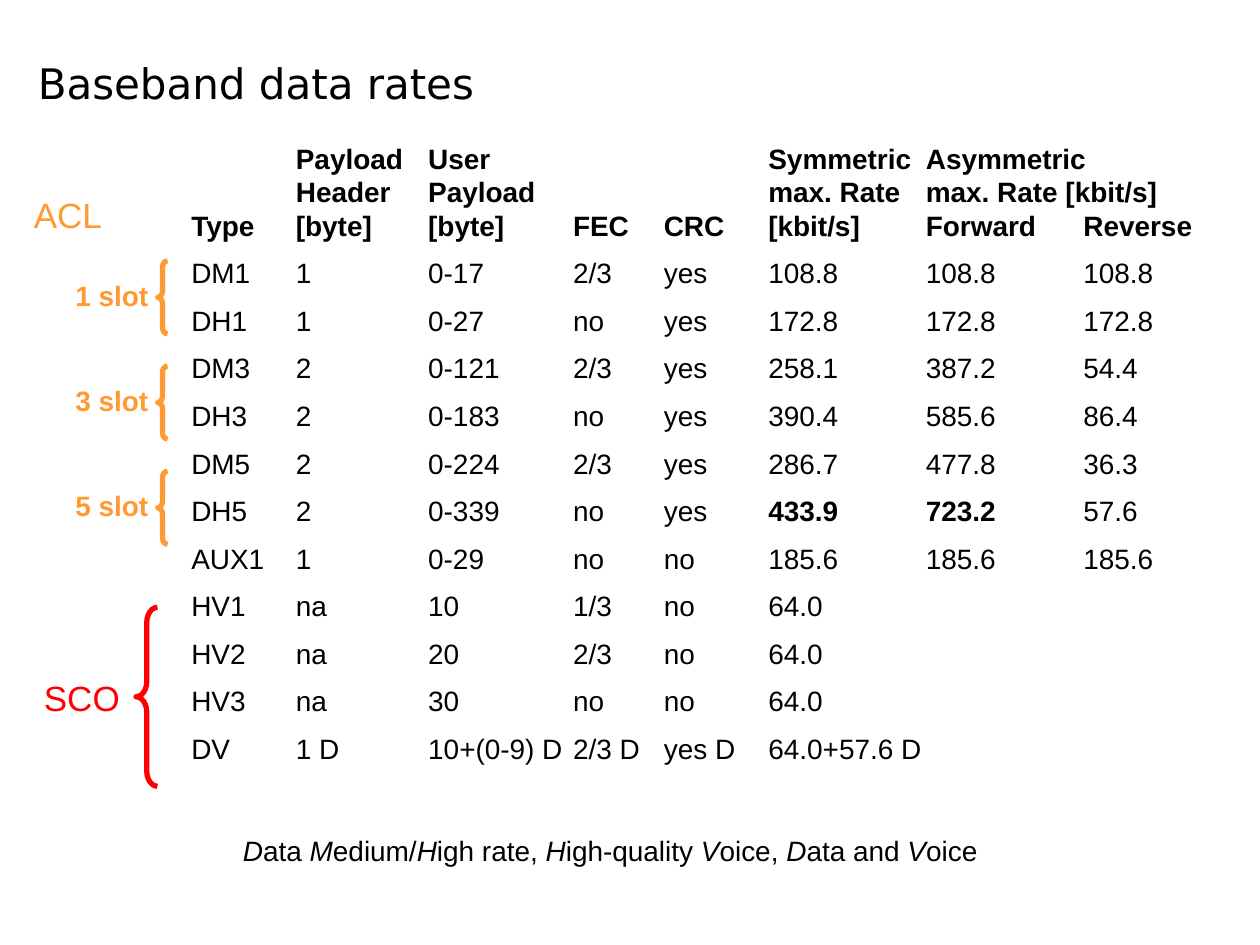
from lxml import etree
from pptx import Presentation
from pptx import util as u
from pptx.dml.color import RGBColor
from pptx.enum import shapes, text
from pptx.oxml.ns import qn

BLACK = RGBColor(0x00, 0x00, 0x00)
ORANGE = RGBColor(0xFF, 0x99, 0x33)
RED = RGBColor(0xFF, 0x00, 0x00)
BODY = {"name": "Arial", "size": u.Pt(16)}
GROUP = {"name": "Arial", "size": u.Pt(20)}

# Column starts, in inches from the left edge of the table text
TAB_STOPS = (0.83, 1.88, 3.03, 3.75, 4.58, 5.83, 7.08)

HEADER = (
    ("", "Payload", "User", "", "", "Symmetric", "Asymmetric"),
    ("", "Header", "Payload", "", "", "max. Rate", "max. Rate [kbit/s]"),
    ("Type", "[byte]", "[byte]", "FEC", "CRC", "[kbit/s]", "Forward", "Reverse"),
)
# Asterisks enclose emphasised text
RATES = (
    ("DM1", "1", "0-17", "2/3", "yes", "108.8", "108.8", "108.8"),
    ("DH1", "1", "0-27", "no", "yes", "172.8", "172.8", "172.8"),
    ("DM3", "2", "0-121", "2/3", "yes", "258.1", "387.2", "54.4"),
    ("DH3", "2", "0-183", "no", "yes", "390.4", "585.6", "86.4"),
    ("DM5", "2", "0-224", "2/3", "yes", "286.7", "477.8", "36.3"),
    ("DH5", "2", "0-339", "no", "yes", "*433.9", "723.2*", "57.6"),
    ("AUX1", "1", "0-29", "no", "no", "185.6", "185.6", "185.6"),
    ("HV1", "na", "10", "1/3", "no", "64.0"),
    ("HV2", "na", "20", "2/3", "no", "64.0"),
    ("HV3", "na", "30", "no", "no", "64.0"),
    ("DV", "1 D", "10+(0-9) D", "2/3 D", "yes D", "64.0+57.6 D"),
)
LEGEND = "*D*ata *M*edium/*H*igh rate, *H*igh-quality *V*oice, *D*ata and *V*oice"


def inches(*lengths):
    return [u.Inches(length) for length in lengths]


def set_font(font, color, **values):
    for name, value in values.items():
        setattr(font, name, value)
    font.color.rgb = color


def add_marked_runs(paragraph, marked, emphasis, color, **values):
    """Add runs, switching the emphasis attribute at each asterisk."""
    for index, part in enumerate(marked.split("*")):
        if part:
            run = paragraph.add_run()
            run.text = part
            set_font(run.font, color, **values, **{emphasis: index % 2 == 1})


def add_box(slide, *box, wrap=False):
    frame = slide.shapes.add_textbox(*inches(*box)).text_frame
    frame.word_wrap = wrap
    return frame


def add_label(slide, label, color, *box, **values):
    paragraph = add_box(slide, *box).paragraphs[0]
    paragraph.text = label
    set_font(paragraph.runs[0].font, color, **values)


def add_brace(slide, color, curve, *box):
    brace = slide.shapes.add_shape(shapes.MSO_SHAPE.LEFT_BRACE, *inches(*box))
    brace.shadow.inherit = False
    brace.adjustments[0] = curve
    brace.fill.background()
    brace.line.color.rgb = color
    brace.line.width = u.Pt(3)


def set_spacing_and_tabs(paragraph, spaced):
    properties = paragraph._p.get_or_add_pPr()
    if spaced:
        before = etree.SubElement(properties, qn("a:spcBef"))
        etree.SubElement(before, qn("a:spcPct"), val="50000")
    tabs = etree.SubElement(properties, qn("a:tabLst"))
    for stop in TAB_STOPS:
        etree.SubElement(tabs, qn("a:tab"), pos=str(u.Inches(stop)), algn="l")


def add_tabbed_rows(slide, *box):
    frame = add_box(slide, *box, wrap=True)
    for index, row in enumerate(HEADER + RATES):
        paragraph = frame.add_paragraph() if index else frame.paragraphs[0]
        is_header = index < len(HEADER)
        set_spacing_and_tabs(paragraph, spaced=not is_header)
        line = "\t".join(row)
        add_marked_runs(paragraph, f"*{line}*" if is_header else line,
                        "bold", BLACK, **BODY)


def set_title(slide, title, *box):
    shape = slide.shapes.title
    shape.left, shape.top, shape.width, shape.height = inches(*box)
    frame = shape.text_frame
    frame.text = title
    frame.auto_size = text.MSO_AUTO_SIZE.NONE
    frame.vertical_anchor = text.MSO_ANCHOR.BOTTOM
    paragraph = frame.paragraphs[0]
    paragraph.alignment = text.PP_ALIGN.LEFT
    set_font(paragraph.runs[0].font, BLACK, name="DejaVu Sans", size=u.Pt(24))


def main():
    presentation = Presentation()
    presentation.slide_width, presentation.slide_height = inches(10, 7.5)
    slide = presentation.slides.add_slide(presentation.slide_layouts[5])

    set_title(slide, "Baseband data rates", 0.2, 0, 6.61, 0.91)
    add_tabbed_rows(slide, 1.42, 1.07, 8.25, 5.31)

    # Packet groups: one brace per slot length
    add_label(slide, "ACL", ORANGE, 0.17, 1.49, 0.74, 0.43, **GROUP)
    for index, slots in enumerate((1, 3, 5)):
        top = 2.07 + index * 0.835
        add_brace(slide, ORANGE, 0.58, 1.25, top, 0.08, 0.58)
        add_label(slide, f"{slots} slot", ORANGE,
                  0.5, top + 0.09, 0.78, 0.37, bold=True, **BODY)
    add_label(slide, "SCO", RED, 0.25, 5.32, 0.8, 0.43, **GROUP)
    add_brace(slide, RED, 0.71, 1.08, 4.82, 0.17, 1.42)

    # Meaning of the type letters
    legend = add_box(slide, 1.83, 6.57, 6.04, 0.37)
    add_marked_runs(legend.paragraphs[0], LEGEND, "italic", BLACK, **BODY)

    presentation.save("out.pptx")


if __name__ == "__main__":
    main()
